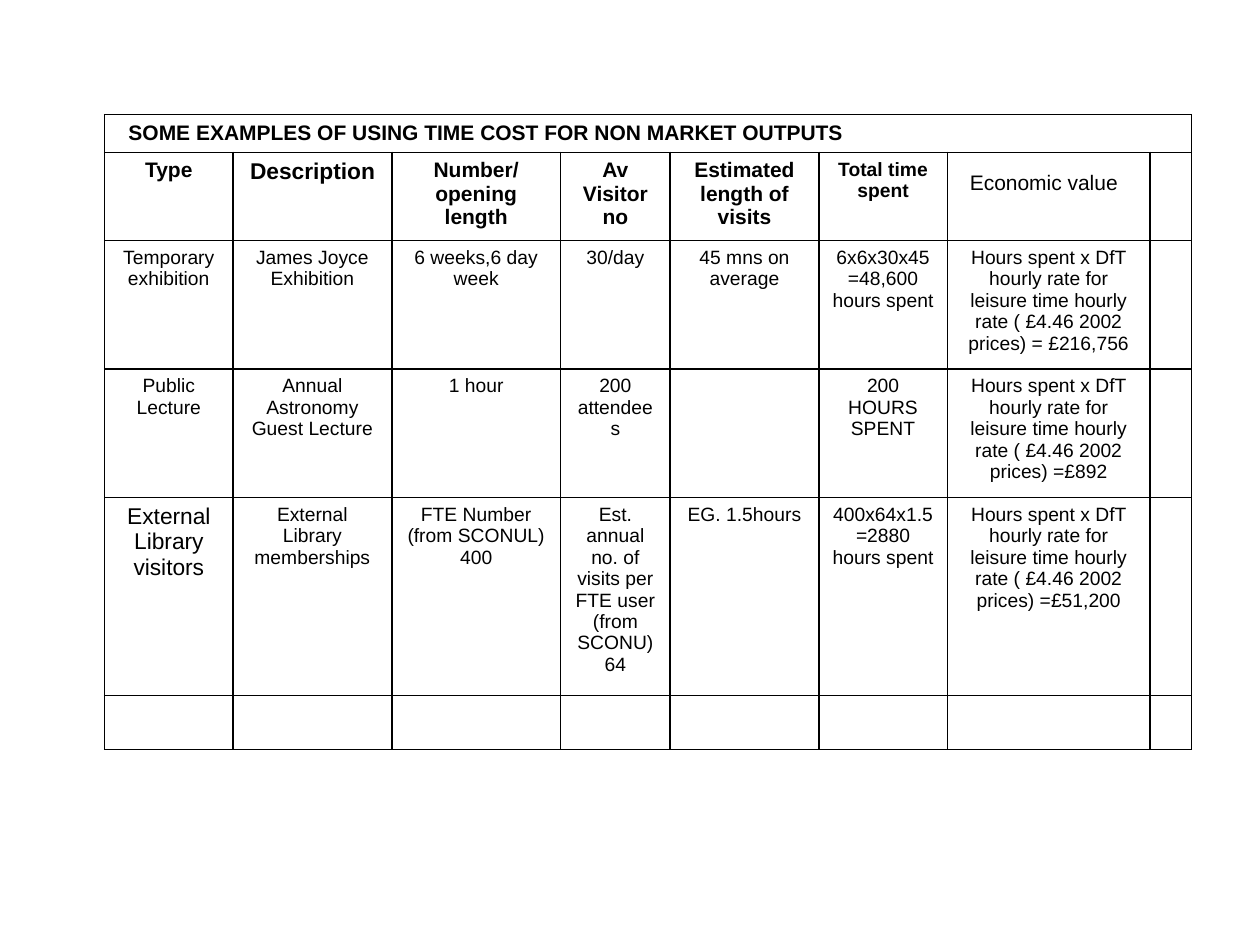
import pptx
import pptx.dml.color
import pptx.enum.text
import pptx.oxml.ns
import pptx.util
from lxml import etree

BLACK = pptx.dml.color.RGBColor(0, 0, 0)
WHITE = pptx.dml.color.RGBColor(255, 255, 255)
FONT = "Arial"
CENTER = pptx.enum.text.PP_ALIGN.CENTER
LEFT = pptx.enum.text.PP_ALIGN.LEFT

TITLE = "SOME EXAMPLES OF USING TIME COST FOR NON MARKET OUTPUTS"
HEADINGS = [
    "Type", "Description", "Number/opening length", "Av Visitor no",
    "Estimated length of visits", "Total time spent", "Economic value",
]
RATE = "Hours spent x DfT hourly rate for leisure time hourly rate ( £4.46 2002 prices) "
EXAMPLES = [
    ["Temporary exhibition", "James Joyce Exhibition", "6 weeks,6 day week", "30/day",
     "45 mns on average", "6x6x30x45 =48,600 hours spent", RATE + "= £216,756"],
    ["Public Lecture", "Annual Astronomy Guest Lecture", "1 hour", "200 attendees",
     "", "200 HOURS\nSPENT", RATE + "=£892"],
    ["External Library visitors", "External Library memberships",
     "FTE Number (from SCONUL) 400",
     "Est. annual no. of visits per FTE user (from SCONU) 64",
     "EG. 1.5hours", "400x64x1.5=2880 hours spent", RATE + "=£51,200"],
]
HEADING_SIZES = {"Description": 13, "Total time spent": 11}
EXAMPLE_SIZES = {"External Library visitors": 13}

TABLE_LEFT, TABLE_TOP = 0.83, 0.91
COLUMN_WIDTHS = [1.02, 1.26, 1.34, 0.87, 1.18, 1.02, 1.61, 0.23]
ROW_HEIGHTS = [0.3, 0.7, 1.02, 1.02, 1.57, 0.43]
TITLE_INDENT = 0.19


def write(cell, text, size=11, bold=False, align=CENTER):
    cell.text = text
    for paragraph in cell.text_frame.paragraphs:
        paragraph.alignment = align
        for run in paragraph.runs:
            run.font.name = FONT
            run.font.size = pptx.util.Pt(size)
            run.font.bold = bold
            run.font.color.rgb = BLACK


def style_cell(cell, border=1):
    """Give the cell a black border on every side and a white fill."""
    properties = cell._tc.get_or_add_tcPr()
    for side in ("a:lnL", "a:lnR", "a:lnT", "a:lnB"):
        line = etree.SubElement(properties, pptx.oxml.ns.qn(side),
                                w=str(pptx.util.Pt(border)))
        fill = etree.SubElement(line, pptx.oxml.ns.qn("a:solidFill"))
        etree.SubElement(fill, pptx.oxml.ns.qn("a:srgbClr"), val=str(BLACK))
    cell.fill.solid()
    cell.fill.fore_color.rgb = WHITE


def main():
    deck = pptx.Presentation()
    deck.slide_width = pptx.util.Inches(10)
    deck.slide_height = pptx.util.Inches(7.5)
    slide = deck.slides.add_slide(deck.slide_layouts[6])

    frame = [TABLE_LEFT, TABLE_TOP, sum(COLUMN_WIDTHS), sum(ROW_HEIGHTS)]
    table = slide.shapes.add_table(len(ROW_HEIGHTS), len(COLUMN_WIDTHS),
                                   *map(pptx.util.Inches, frame)).table
    table.first_row = table.horz_banding = False
    for column, width in zip(table.columns, COLUMN_WIDTHS):
        column.width = pptx.util.Inches(width)
    for row, height in zip(table.rows, ROW_HEIGHTS):
        row.height = pptx.util.Inches(height)
    for cell in table.iter_cells():
        style_cell(cell)

    title_cell = table.cell(0, 0)
    title_cell.merge(table.cell(0, len(COLUMN_WIDTHS) - 1))
    title_cell.margin_left = pptx.util.Inches(TITLE_INDENT)
    write(title_cell, TITLE, size=12, bold=True, align=LEFT)

    for column, heading in enumerate(HEADINGS):
        write(table.cell(1, column), heading, size=HEADING_SIZES.get(heading, 12),
              bold=heading != "Economic value")
    # A larger trailing space sets the last heading lower in its cell
    spacer = table.cell(1, len(HEADINGS) - 1).text_frame.paragraphs[0].add_run()
    spacer.text = " "
    spacer.font.name = FONT
    spacer.font.size = pptx.util.Pt(20)

    for row, example in enumerate(EXAMPLES, start=2):
        for column, entry in enumerate(example):
            if entry:
                write(table.cell(row, column), entry, size=EXAMPLE_SIZES.get(entry, 11))

    deck.save("out.pptx")


if __name__ == "__main__":
    main()
